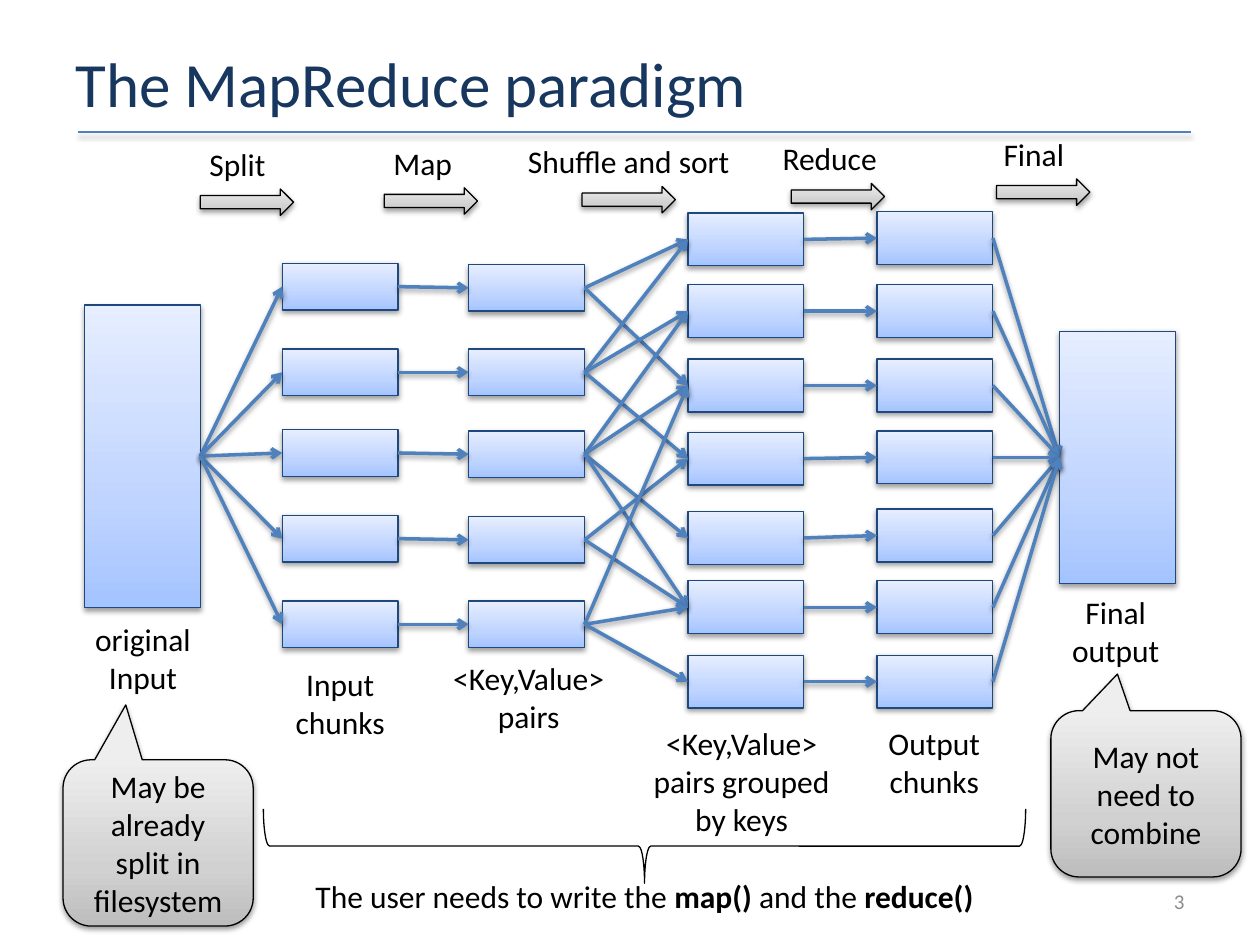
"""Draw the stages of the MapReduce paradigm on one slide."""
from dataclasses import dataclass

from lxml import etree
from pptx import Presentation
from pptx.dml.color import RGBColor
from pptx.enum.shapes import MSO_CONNECTOR, MSO_SHAPE
from pptx.enum.text import MSO_ANCHOR, PP_ALIGN
from pptx.oxml.ns import qn
from pptx.util import Emu, Inches, Pt

RECT = MSO_SHAPE.RECTANGLE
ARROW = MSO_SHAPE.RIGHT_ARROW
CALLOUT = MSO_SHAPE.ROUNDED_RECTANGULAR_CALLOUT
BRACE = MSO_SHAPE.RIGHT_BRACE
STRAIGHT = MSO_CONNECTOR.STRAIGHT
LEFT, CENTER, RIGHT = PP_ALIGN.LEFT, PP_ALIGN.CENTER, PP_ALIGN.RIGHT
TOP, MIDDLE = MSO_ANCHOR.TOP, MSO_ANCHOR.MIDDLE
WEST, EAST = 1, 3
COLS, ROWS = 100, 75
WIDE, TALL = Inches(10), Inches(7.5)


@dataclass(frozen=True)
class Theme:
    font: str = "Calibri"
    title: str = "17375E"
    ink: str = "000000"
    pale: str = "8C8C8C"
    link: str = "4F81BD"
    edge: str = "1F497D"
    blue: tuple = ("A4C4FF", "BFD4FF", "E6EEFF")
    gray: tuple = ("BDBDBD", "D1D1D1", "EEEEEE")
    stops: tuple = (0, 35, 100)
    head: float = 36
    body: float = 18
    small: float = 12
    thin: float = 0.75
    rule: float = 1
    bold: float = 2


@dataclass(frozen=True)
class Area:
    col: float
    row: float
    w: float
    h: float

    def emu(self) -> tuple:
        return at(self.col, self.row) + at(self.w, self.h)


@dataclass(frozen=True)
class Stack:
    col: float
    rows: tuple
    h: float


@dataclass(frozen=True)
class Step:
    name: str
    mid: float
    row: float
    arrow: float


@dataclass(frozen=True)
class Note:
    text: str
    area: Area


@dataclass(frozen=True)
class Bubble:
    note: Note
    tip: tuple


THEME = Theme()
BOX_W = 9.2
STACKS = (
    Stack(6.7, (24.2,), 24),
    Stack(22.4, (20.9, 27.7, 34.1, 40.9, 47.7), 3.7),
    Stack(37.2, (21, 27.7, 34.2, 41, 47.7), 3.7),
    Stack(54.6, (16.9, 22.6, 28.5, 34.3, 40.6, 46.1, 52), 4.2),
    Stack(69.6, (16.8, 22.6, 28.5, 34.2, 40.4, 46.1, 52), 4.2),
    Stack(84.1, (26.3,), 20),
)
SHUFFLE = ((0, 2), (0, 1, 3), (1, 2, 4, 5), (3, 5), (2, 5, 6))
STEPS = (
    Step("Split", 18.85, 11, 15.9),
    Step("Map", 33.55, 10.9, 30.5),
    Step("Shuffle and sort", 49.9, 10.8, 46.2),
    Step("Reduce", 65.85, 10.55, 62.8),
    Step("Final", 82.05, 10.2, 79.1),
)
NOTES = (
    Note("original\nInput", Area(5.5, 48.7, 11.7, 7.1)),
    Note("Input chunks", Area(22.4, 52.3, BOX_W, 7.1)),
    Note("<Key,Value> pairs", Area(33.5, 51.8, 16.9, 7.1)),
    Note("<Key,Value> pairs grouped by keys", Area(50.4, 57, 16.9, 10.1)),
    Note("Output chunks", Area(69, 57, 10.3, 7.1)),
    Note("Final\noutput", Area(83.4, 46.6, 10.3, 7.1)),
    Note("The user needs to write the *map()* and the *reduce()*",
         Area(20.9, 69.1, 60.5, 4)),
)
BUBBLES = (
    Bubble(Note("May be already split in filesystem",
                Area(5, 60.3, 15.1, 13.2)), (-0.17, -0.83, 0.17)),
    Bubble(Note("May not need to combine",
                Area(83.4, 56.4, 15.1, 13.2)), (-0.15, -0.72, 0.17)),
)


def at(col: float, row: float) -> tuple:
    """Turn a grid point into slide lengths."""
    return Emu(round(WIDE * col / COLS)), Emu(round(TALL * row / ROWS))


def write(frame, text: str, size: float = THEME.body, color: str = THEME.ink,
          align=CENTER, anchor=TOP) -> None:
    """Fill a frame line by line, with starred parts in bold."""
    frame.word_wrap = True
    frame.vertical_anchor = anchor
    for i, line in enumerate(text.split("\n")):
        para = frame.add_paragraph() if i else frame.paragraphs[0]
        para.alignment = align
        for j, part in enumerate(line.split("*")):
            if part:
                run = para.add_run()
                run.text = part
                run.font.name = THEME.font
                run.font.size = Pt(size)
                run.font.bold = j % 2 == 1
                run.font.color.rgb = RGBColor.from_string(color)


def label(slide, note: Note, **style) -> None:
    """Add a text box."""
    box = slide.shapes.add_textbox(*note.area.emu())
    write(box.text_frame, note.text, **style)


def paint(line, color: str, width: float) -> None:
    """Set the colour and width of a line."""
    line.color.rgb = RGBColor.from_string(color)
    line.width = Pt(width)


def shade(effects) -> None:
    """Put a soft shadow below into an effect list."""
    outer = etree.SubElement(effects, qn("a:outerShdw"), blurRad="40000",
                             dist="20000", dir="5400000", rotWithShape="0")
    black = etree.SubElement(outer, qn("a:srgbClr"), val=THEME.ink)
    etree.SubElement(black, qn("a:alpha"), val="38000")


def block(slide, kind, area: Area, tones: tuple, edge: str):
    """Add a shape with a gradient from bottom to top and a shadow."""
    shape = slide.shapes.add_shape(kind, *area.emu())
    shape.fill.gradient()
    shape.fill.gradient_angle = 90
    stops = shape._element.spPr.find(".//" + qn("a:gsLst"))
    for old in list(stops):
        stops.remove(old)
    for pos, tone in zip(THEME.stops, tones):
        stop = etree.SubElement(stops, qn("a:gs"), pos=str(pos * 1000))
        etree.SubElement(stop, qn("a:srgbClr"), val=tone)
    paint(shape.line, edge, THEME.thin)
    shape.shadow.inherit = False
    shade(shape._element.spPr.find(qn("a:effectLst")))
    return shape


def stroke(slide, start: tuple, end: tuple, width: float):
    """Add a straight line with a shadow."""
    line = slide.shapes.add_connector(STRAIGHT, *start, *end)
    paint(line.line, THEME.link, width)
    shade(etree.SubElement(line._element.spPr, qn("a:effectLst")))
    return line


def join(slide, src, dst) -> None:
    """Draw an arrow from the right of one box to the left of another."""
    line = stroke(slide, (src.left, src.top), (dst.left, dst.top), THEME.bold)
    line.begin_connect(src, EAST)
    line.end_connect(dst, WEST)
    etree.SubElement(line.line._get_or_add_ln(), qn("a:tailEnd"), type="arrow")


def flow(slide) -> None:
    """Draw the stacks of boxes and the arrows between them."""
    source, chunks, pairs, groups, parts, result = [
        [block(slide, RECT, Area(s.col, row, BOX_W, s.h), THEME.blue, THEME.edge)
         for row in s.rows] for s in STACKS]
    links = [(source[0], chunk) for chunk in chunks]
    links += zip(chunks, pairs)
    links += [(pair, groups[i]) for pair, keys in zip(pairs, SHUFFLE) for i in keys]
    links += zip(groups, parts)
    links += [(part, result[0]) for part in parts]
    for src, dst in links:
        join(slide, src, dst)


def main() -> None:
    """Build and save the slide."""
    deck = Presentation()
    deck.slide_width, deck.slide_height = WIDE, TALL
    slide = deck.slides.add_slide(deck.slide_layouts[5])
    title = slide.shapes.title
    title.left, title.top, title.width, title.height = Area(5, 3, 90, 7.1).emu()
    write(title.text_frame, "The MapReduce paradigm", THEME.head, THEME.title,
          LEFT, MIDDLE)
    stroke(slide, at(6.2, 10.5), at(94.5, 10.5), THEME.rule)
    flow(slide)
    for step in STEPS:
        label(slide, Note(step.name, Area(step.mid - 9.3, step.row, 18.6, 4)))
        block(slide, ARROW, Area(step.arrow, step.row + 4, 7.4, 2.1),
              THEME.gray, THEME.ink)
    for note in NOTES:
        label(slide, note)
    for item in BUBBLES:
        shape = block(slide, CALLOUT, item.note.area, THEME.gray, THEME.ink)
        for i, value in enumerate(item.tip):
            shape.adjustments[i] = value
        write(shape.text_frame, item.note.text, anchor=MIDDLE)
    brace = slide.shapes.add_shape(BRACE, *Area(48.2, 36.9, 5.9, 60.5).emu())
    brace.rotation = 90
    brace.fill.background()
    paint(brace.line, THEME.ink, THEME.thin)
    brace.shadow.inherit = False
    label(slide, Note("3", Area(71.7, 69.5, 23.3, 4)), size=THEME.small,
          color=THEME.pale, align=RIGHT, anchor=MIDDLE)
    deck.save("out.pptx")


if __name__ == "__main__":
    main()
